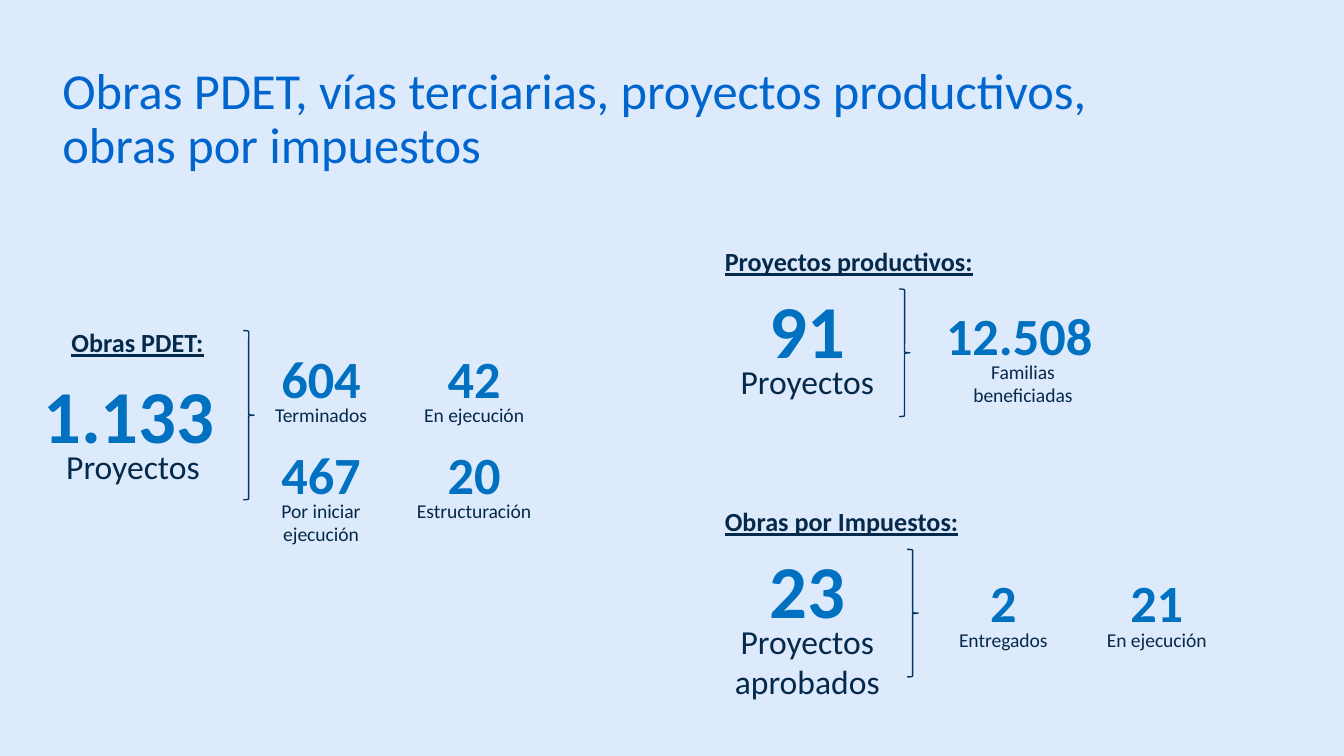
from pptx import Presentation
from pptx.dml.color import RGBColor
from pptx.enum import shapes, text
from pptx.util import Pt

# Content (lengths in points)
TITLE = "Obras PDET, vías terciarias, proyectos productivos, obras por impuestos"
CENTER, LEFT = text.PP_ALIGN.CENTER, text.PP_ALIGN.LEFT

# heading, left, top, width, alignment, exact line spacing
HEADINGS = [
    ("Obras PDET:", 20, 173.9, 107.3, CENTER, 12),
    ("Proyectos productivos:", 381.2, 129, 178, LEFT, 15),
    ("Obras por Impuestos:", 381.2, 268.3, 178, LEFT, 15),
]
# number, label lines, centre x, top, label shift to the right
TOTALS = [
    ("1.133", ["Proyectos"], 69, 194.2, 2.3),
    ("91", ["Proyectos"], 432.5, 148.4, 0),
    ("23", ["Proyectos", "aprobados"], 432.5, 287.7, 0),
]
DETAILS = [
    ("604", ["Terminados"], 172, 182, 0),
    ("42", ["En ejecución"], 254, 182, 0),
    ("467", ["Por iniciar", "ejecución"], 172, 233.2, 0),
    ("20", ["Estructuración"], 254, 233.2, 0),
    ("12.508", ["Familias", "beneficiadas"], 546, 158.8, 2),
    ("2", ["Entregados"], 537.5, 302.2, 0),
    ("21", ["En ejecución"], 619.7, 302.2, 0),
]
# left, top, height
BRACES = [(130.3, 177.1, 90.7), (481.7, 154.8, 68.4), (486, 294.3, 68.4)]

# Formats
NUMBER = {"bold": True, "color": "0070C0"}
LABEL = {"color": "05294A"}
HEADING = {"size": Pt(14), "bold": True, "underline": True, "color": "05294A"}
# list of statistics, number size, label size, distance between their tops
LEVELS = [(TOTALS, 40, 18, 41.3), (DETAILS, 28, 10.5, 30.5)]


def rgb(code):
    return RGBColor.from_string(code)


def write(tf, lines, fmt, align):
    for i, line in enumerate(lines):
        p = tf.paragraphs[0] if i == 0 else tf.add_paragraph()
        p.alignment = align
        r = p.add_run()
        r.text = line
        r.font.name = "Calibri"
        for key, value in fmt.items():
            if key == "color":
                r.font.color.rgb = rgb(value)
            else:
                setattr(r.font, key, value)


def centred_text(s, lines, x, top, size, fmt):
    width = max(map(len, lines)) * size * 0.52 + 14.4
    height = len(lines) * size * 1.22 + 7.2
    box = s.shapes.add_textbox(Pt(x - width / 2), Pt(top), Pt(width), Pt(height))
    tf = box.text_frame
    tf.word_wrap = False
    tf.auto_size = text.MSO_AUTO_SIZE.SHAPE_TO_FIT_TEXT
    write(tf, lines, {"size": Pt(size), **fmt}, CENTER)


prs = Presentation()
prs.slide_width, prs.slide_height = Pt(720), Pt(405)
s = prs.slides.add_slide(prs.slide_layouts[5])
s.background.fill.solid()
s.background.fill.fore_color.rgb = rgb("DCEAFB")

# Title
title = s.shapes.title
title.left, title.top, title.width, title.height = Pt(28), Pt(24.5), Pt(608.5), Pt(80)
tf = title.text_frame
frame = {"word_wrap": True, "auto_size": text.MSO_AUTO_SIZE.NONE,
         "vertical_anchor": text.MSO_ANCHOR.MIDDLE,
         "margin_left": Pt(5.4), "margin_right": Pt(5.4),
         "margin_top": Pt(2.7), "margin_bottom": Pt(2.7)}
for key, value in frame.items():
    setattr(tf, key, value)
write(tf, [TITLE], {"size": Pt(27), "color": "0066CD"}, LEFT)
tf.paragraphs[0].line_spacing = 0.9

# Section headings
for name, left, top, width, align, spacing in HEADINGS:
    tf = s.shapes.add_textbox(Pt(left), Pt(top), Pt(width), Pt(24)).text_frame
    tf.word_wrap = True
    tf.vertical_anchor = text.MSO_ANCHOR.MIDDLE
    write(tf, [name], HEADING, align)
    tf.paragraphs[0].line_spacing = Pt(spacing)

# Numbers with their labels below
for stats, number_size, label_size, drop in LEVELS:
    for number, label, x, top, shift in stats:
        centred_text(s, [number], x, top, number_size, NUMBER)
        centred_text(s, label, x + shift, top + drop, label_size, LABEL)

# Braces between totals and details
for left, top, height in BRACES:
    brace = s.shapes.add_shape(shapes.MSO_SHAPE.RIGHT_BRACE,
                               Pt(left), Pt(top), Pt(5.8), Pt(height))
    brace.shadow.inherit = False
    brace.fill.background()
    brace.line.color.rgb = rgb("053663")
    brace.line.width = Pt(0.75)

prs.save("out.pptx")
